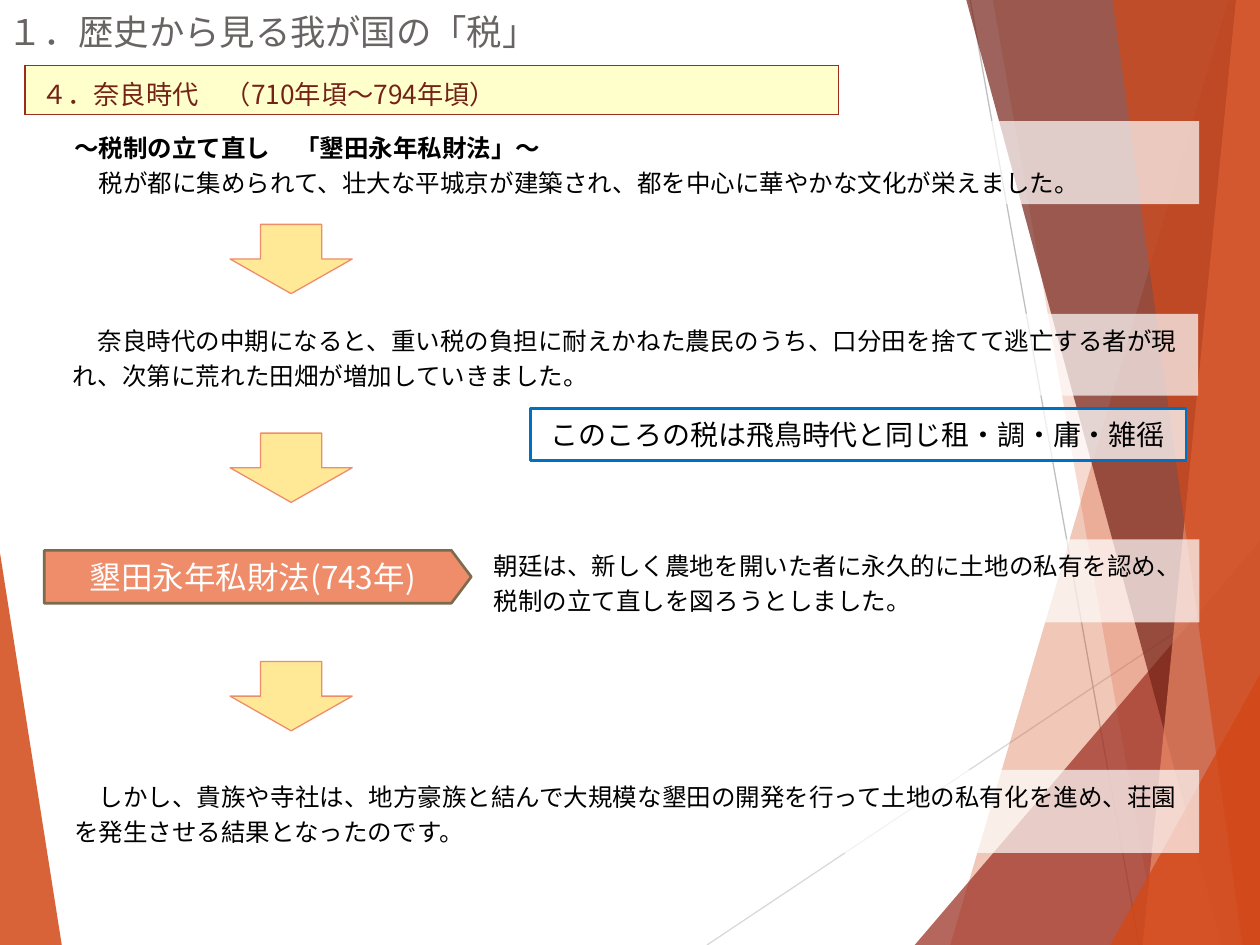
from lxml.etree import SubElement
from pptx import Presentation
from pptx.dml.color import RGBColor
from pptx.enum.shapes import MSO_CONNECTOR, MSO_SHAPE
from pptx.enum.text import MSO_ANCHOR, PP_ALIGN
from pptx.oxml.ns import qn
from pptx.util import Pt

FONT = "Noto Sans CJK JP"
WIDTH, HEIGHT = 720, 540


def color(value):
    return RGBColor.from_string(value)


def points(box):
    return [Pt(length) for length in box]


def style_shape(shape, fill, opacity=100, line=None, line_width=0.75):
    shape.shadow.inherit = False
    shape.fill.solid()
    shape.fill.fore_color.rgb = color(fill)
    if opacity < 100:
        solid = shape.fill._xPr.find(qn("a:solidFill"))
        SubElement(solid[0], qn("a:alpha"), val=str(opacity * 1000))
    if line:
        shape.line.color.rgb = color(line)
        shape.line.width = Pt(line_width)
    else:
        shape.line.fill.background()


def write_text(paragraph, text, size=14, fill="000000", bold=False,
               align=PP_ALIGN.LEFT, spacing=None):
    paragraph.alignment = align
    if spacing:
        paragraph.line_spacing = Pt(spacing)
    run = paragraph.add_run()
    run.text = text
    run.font.size = Pt(size)
    run.font.bold = bold
    run.font.color.rgb = color(fill)
    run.font.name = FONT
    SubElement(run._r.get_or_add_rPr(), qn("a:ea"), typeface=FONT)


def add_facet(slide, corners, fill, opacity):
    start, *others = [points(corner) for corner in corners]
    builder = slide.shapes.build_freeform(*start, scale=1.0)
    builder.add_line_segments(others, close=True)
    style_shape(builder.convert_to_shape(), fill, opacity)


def add_thin_line(slide, start, end, line):
    connector = slide.shapes.add_connector(
        MSO_CONNECTOR.STRAIGHT, *points(start), *points(end))
    connector.line.color.rgb = color(line)
    connector.line.width = Pt(0.75)
    SubElement(connector._element.spPr, qn("a:effectLst"))


def add_backdrop(slide):
    add_facet(slide, [(0, 316), (35.3, HEIGHT), (0, HEIGHT)], "D34817", 85)
    add_thin_line(slide, (404, HEIGHT), (WIDTH, 329), "D9D9D9")
    add_thin_line(slide, (554.4, 0), (651, HEIGHT), "BFBFBF")
    facets = [
        (702, 0, 543, "D34817", 30),
        (567.4, 0, 661.7, "D34817", 20),
        (WIDTH, 309, 522.7, "9B2D1F", 72),
        (552.2, 0, 698.4, "742217", 70),
        (706.3, 0, 653, "EF8C6A", 70),
        (635.8, 0, 710, "D34817", 65),
        (WIDTH, 385.2, 634.5, "D34817", 80),
    ]
    for top_x, top_y, bottom_x, fill, opacity in facets:
        corners = [(top_x, top_y), (bottom_x, HEIGHT), (WIDTH, HEIGHT)]
        if top_x < WIDTH:
            corners.append((WIDTH, top_y))
        add_facet(slide, corners, fill, opacity)


def add_title(slide, box, text):
    frame = slide.shapes.add_textbox(*points(box)).text_frame
    frame.word_wrap = True
    frame.vertical_anchor = MSO_ANCHOR.MIDDLE
    frame.margin_left = frame.margin_right = 0
    frame.margin_top = frame.margin_bottom = 0
    write_text(frame.paragraphs[0], text, size=20.2, fill="696464")


def add_era_table(slide, box, text):
    table = slide.shapes.add_table(1, 1, *points(box)).table
    table.first_row = table.horz_banding = False
    cell = table.cell(0, 0)
    cell.fill.solid()
    cell.fill.fore_color.rgb = color("FFFFCC")
    cell.margin_left = cell.margin_right = Pt(9.36)
    cell.margin_top = cell.margin_bottom = Pt(5)
    write_text(cell.text_frame.paragraphs[0], text, size=15, fill="742217")
    properties = cell._tc.get_or_add_tcPr()
    for index, side in enumerate(("lnL", "lnR", "lnT", "lnB")):
        border = SubElement(properties, qn(f"a:{side}"), w=str(Pt(1)))
        solid = SubElement(border, qn("a:solidFill"))
        SubElement(solid, qn("a:srgbClr"), val="9B2D1F")
        properties.insert(index, border)


def add_passage(slide, box, text, heading=None):
    shape = slide.shapes.add_shape(MSO_SHAPE.RECTANGLE, *points(box))
    style_shape(shape, "FFFFFF", 70)
    frame = shape.text_frame
    frame.word_wrap = True
    frame.vertical_anchor = MSO_ANCHOR.TOP
    paragraph = frame.paragraphs[0]
    if heading:
        write_text(paragraph, heading, bold=True, spacing=20)
        paragraph = frame.add_paragraph()
    write_text(paragraph, text, spacing=20)


def add_label(slide, kind, box, text, size, text_fill, **style):
    shape = slide.shapes.add_shape(kind, *points(box))
    style_shape(shape, line_width=1.5, **style)
    frame = shape.text_frame
    frame.word_wrap = True
    frame.vertical_anchor = MSO_ANCHOR.MIDDLE
    write_text(frame.paragraphs[0], text, size=size, fill=text_fill,
               align=PP_ALIGN.CENTER)
    return shape


def add_down_arrow(slide, box):
    shape = slide.shapes.add_shape(MSO_SHAPE.DOWN_ARROW, *points(box))
    style_shape(shape, "FFD22F", 50, line="EF8C6A")


def build_slide(presentation):
    slide = presentation.slides.add_slide(presentation.slide_layouts[6])
    add_backdrop(slide)
    add_title(slide, (0, 1.5, 394, 32.5), " １．歴史から見る我が国の「税」")
    add_era_table(slide, (14.2, 37.5, 465, 27.5),
                  "４．奈良時代　（710年頃～794年頃）")
    add_passage(slide, (35.3, 69.2, 650, 47.5),
                "　税が都に集められて、壮大な平城京が建築され、都を中心に華やかな文化が栄えました。",
                heading="～税制の立て直し　「墾田永年私財法」～")
    law = add_label(slide, MSO_SHAPE.PENTAGON, (25.3, 314.5, 244, 30.2),
                    "墾田永年私財法(743年)", 18, "FFFFFF",
                    fill="EF8C6A", line="7C6B4D")
    law.adjustments[0] = 0.375
    add_passage(slide, (34.6, 179.3, 650, 46.8),
                "　奈良時代の中期になると、重い税の負担に耐えかねた農民のうち、"
                "口分田を捨てて逃亡する者が現れ、次第に荒れた田畑が増加していきました。")
    add_passage(slide, (275, 308.2, 410.4, 47.5),
                "朝廷は、新しく農地を開いた者に永久的に土地の私有を認め、"
                "税制の立て直しを図ろうとしました。")
    add_passage(slide, (35.3, 439.9, 650, 47.5),
                "　しかし、貴族や寺社は、地方豪族と結んで大規模な墾田の開発を行って"
                "土地の私有化を進め、荘園を発生させる結果となったのです。")
    for top in (128.2, 247.5, 378):
        add_down_arrow(slide, (131.5, top, 69.8, 39.6))
    add_label(slide, MSO_SHAPE.RECTANGLE, (303.1, 233.3, 374.6, 29.8),
              "このころの税は飛鳥時代と同じ租・調・庸・雑徭", 16, "000000",
              fill="FFFFFF", opacity=75, line="0070C0")


def main():
    presentation = Presentation()
    presentation.slide_width = Pt(WIDTH)
    presentation.slide_height = Pt(HEIGHT)
    build_slide(presentation)
    presentation.save("out.pptx")


if __name__ == "__main__":
    main()
